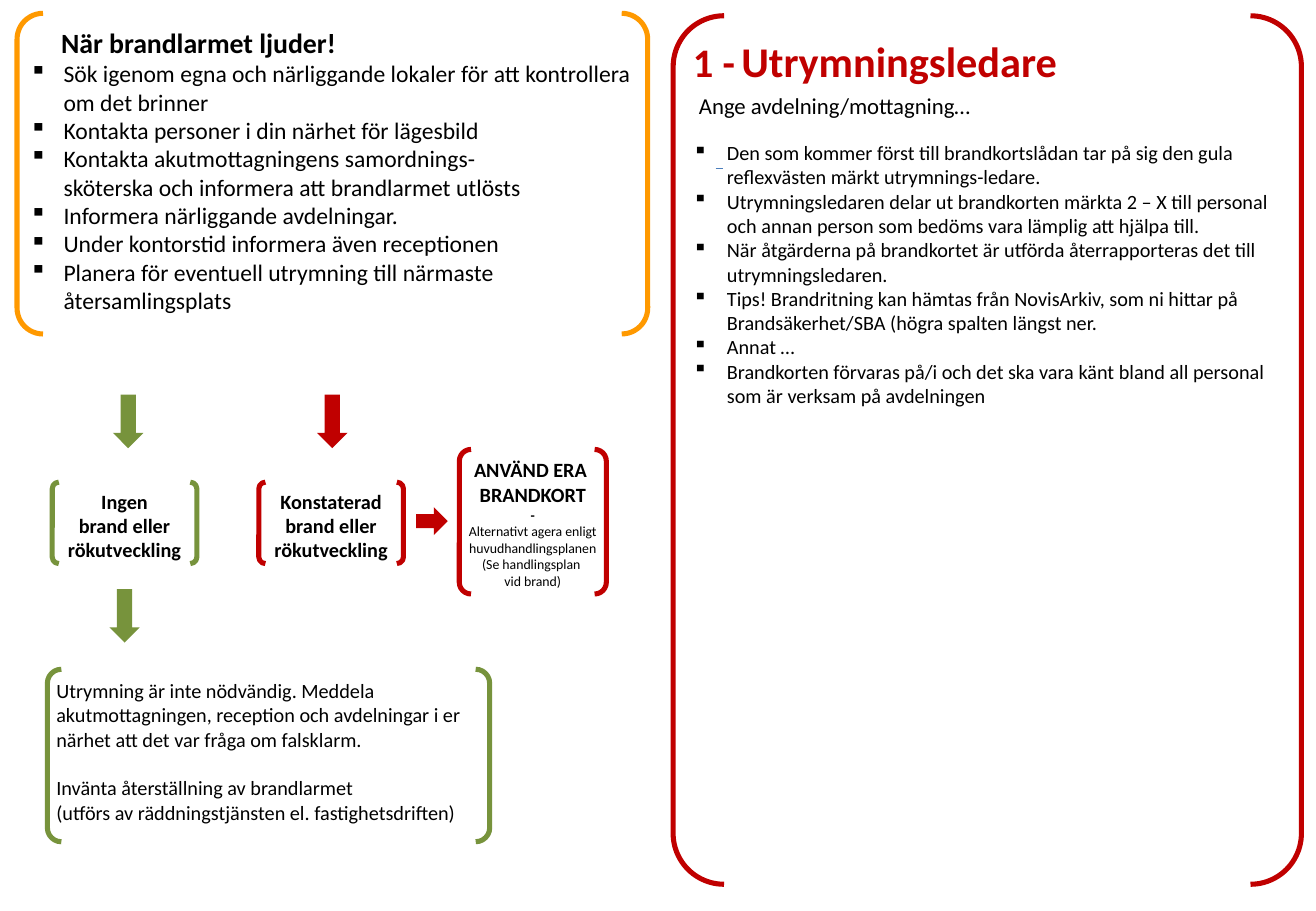
"""Builds the fire alarm instruction card."""
from lxml.etree import SubElement
from pptx import Presentation
from pptx.dml.color import RGBColor
from pptx.enum.shapes import MSO_CONNECTOR as Connector, MSO_SHAPE as Shape
from pptx.enum.text import MSO_ANCHOR as Anchor, PP_ALIGN as Align
from pptx.oxml.ns import qn
from pptx.util import Inches, Pt

COLORS = {"orange": "FF9900", "green": "77933C", "red": "C00000",
          "blue": "4B7EBC", "black": "000000"}
FONT = "Calibri"
BULLET_INDENT = 0.28

ALARM_STEPS = [
    "Sök igenom egna och närliggande lokaler för att kontrollera om det brinner",
    "Kontakta personer i din närhet för lägesbild",
    "Kontakta akutmottagningens samordnings-\nsköterska och informera att brandlarmet utlösts",
    "Informera närliggande avdelningar.",
    "Under kontorstid informera även receptionen",
    "Planera för eventuell utrymning till närmaste återsamlingsplats",
]
LEADER_TASKS = [
    "Den som kommer först till brandkortslådan tar på sig den gula reflexvästen märkt utrymnings-ledare.",
    "Utrymningsledaren delar ut brandkorten märkta 2 – X till personal och annan person som bedöms vara lämplig att hjälpa till.",
    "När åtgärderna på brandkortet är utförda återrapporteras det till utrymningsledaren.",
    "Tips! Brandritning kan hämtas från NovisArkiv, som ni hittar på Brandsäkerhet/SBA (högra spalten längst ner.",
    "Annat …",
    "Brandkorten förvaras på/i och det ska vara känt bland all personal som är verksam på avdelningen",
]


def rgb(name):
    return RGBColor.from_string(COLORS[name])


def add_text(frame, text, size=12, bold=False, color="black", align=Align.LEFT,
             bullet=False, indent=0, before=0, after=0):
    """Adds one paragraph, filling the empty first one before making more."""
    first = frame.paragraphs[0]
    paragraph = frame.add_paragraph() if first.runs else first
    paragraph.text = text
    paragraph.alignment = align
    paragraph.space_before, paragraph.space_after = Pt(before), Pt(after)
    properties = paragraph._p.get_or_add_pPr()
    hanging = BULLET_INDENT if bullet else 0
    properties.set("marL", str(Inches(indent + hanging)))
    properties.set("indent", str(-Inches(hanging)))
    SubElement(properties, qn("a:buChar"), char="▪") if bullet else SubElement(properties, qn("a:buNone"))
    for line_break in paragraph._p.findall(qn("a:br")):
        SubElement(line_break, qn("a:rPr"), sz=str(int(size * 100)))
    for run in paragraph.runs:
        run.font.name, run.font.size, run.font.bold = FONT, Pt(size), bold
        run.font.color.rgb = rgb(color)
    return paragraph


class Card:
    """Holds the slide and draws its brackets, arrows and lines."""

    def __init__(self, slide):
        self.slide = slide

    def bracket(self, left, top, width, height, color):
        shape = self.slide.shapes.add_shape(
            Shape.DOUBLE_BRACKET, Inches(left), Inches(top), Inches(width), Inches(height))
        shape.adjustments[0] = 0.081
        shape.shadow.inherit = False
        shape.fill.background()
        shape.line.color.rgb = rgb(color)
        shape.line.width = Pt(3)
        frame = shape.text_frame
        frame.word_wrap = True
        frame.vertical_anchor = Anchor.TOP
        frame.margin_left = frame.margin_right = Inches(0.04)
        frame.margin_top = frame.margin_bottom = Inches(0.04)
        return frame

    def arrow(self, left, top, color, width=0.25, height=0.44, rotation=0):
        shape = self.slide.shapes.add_shape(
            Shape.DOWN_ARROW, Inches(left), Inches(top), Inches(width), Inches(height))
        shape.rotation = rotation
        shape.shadow.inherit = False
        shape.fill.solid()
        shape.fill.fore_color.rgb = rgb(color)
        shape.line.fill.background()

    def line(self, left, right, y, color):
        line = self.slide.shapes.add_connector(
            Connector.STRAIGHT, Inches(left), Inches(y), Inches(right), Inches(y))
        line.line.color.rgb = rgb(color)
        line.line.width = Pt(0.75)
        SubElement(line._element.spPr, qn("a:effectLst"))


def main():
    prs = Presentation()
    prs.slide_width, prs.slide_height = Inches(10.83), Inches(7.5)
    card = Card(prs.slides.add_slide(prs.slide_layouts[6]))

    alarm = card.bracket(0.14, 0.11, 5.19, 2.64, "orange")
    add_text(alarm, "När brandlarmet ljuder!", size=16.5, bold=True, indent=0.26)
    for step in ALARM_STEPS:
        add_text(alarm, step, size=14, bullet=True)

    outcomes = [(0.43, "green", "Ingen\nbrand eller rökutveckling"),
                (2.13, "red", "Konstaterad brand eller rökutveckling")]
    for left, color, outcome in outcomes:
        add_text(card.bracket(left, 3.97, 1.19, 0.67, color), outcome,
                 bold=True, align=Align.CENTER)

    fire_cards = card.bracket(3.78, 3.7, 1.21, 1.19, "red")
    add_text(fire_cards, "ANVÄND ERA \nBRANDKORT", bold=True, align=Align.CENTER)
    add_text(fire_cards, "-", size=8.2, bold=True, align=Align.CENTER)
    for alternative in ("Alternativt agera enligt huvudhandlingsplanen",
                        "(Se handlingsplan \nvid brand)"):
        add_text(fire_cards, alternative, size=8.2, align=Align.CENTER)

    false_alarm = card.bracket(0.39, 5.51, 3.64, 1.42, "green")
    add_text(false_alarm, "Utrymning är inte nödvändig. Meddela akutmottagningen, reception "
             "och avdelningar i er närhet att det var fråga om falsklarm.", after=14.6)
    add_text(false_alarm, "Invänta återställning av brandlarmet")
    add_text(false_alarm, "(utförs av räddningstjänsten el. fastighetsdriften)")

    card.line(5.89, 5.95, 1.39, "blue")
    leader = card.bracket(5.54, 0.13, 5.17, 7.15, "red")
    heading = add_text(leader, "1 -", size=24, bold=True, color="red")
    for part, size in ((" ", 16.5), ("Utrymningsledare", 25.1)):
        run = heading.add_run()
        run.text = part
        run.font.name, run.font.size, run.font.bold = FONT, Pt(size), True
        run.font.color.rgb = rgb("red")
    add_text(leader, "Ange avdelning/mottagning…", size=13.5, indent=0.05,
             before=3, after=12.8)
    for task in LEADER_TASKS:
        add_text(leader, task, bullet=True)

    for left, top, color in ((0.93, 3.25, "green"), (0.9, 4.85, "green"), (2.61, 3.25, "red")):
        card.arrow(left, top, color)
    card.arrow(3.44, 4.16, "red", width=0.23, height=0.26, rotation=270)

    prs.save("out.pptx")


if __name__ == "__main__":
    main()
